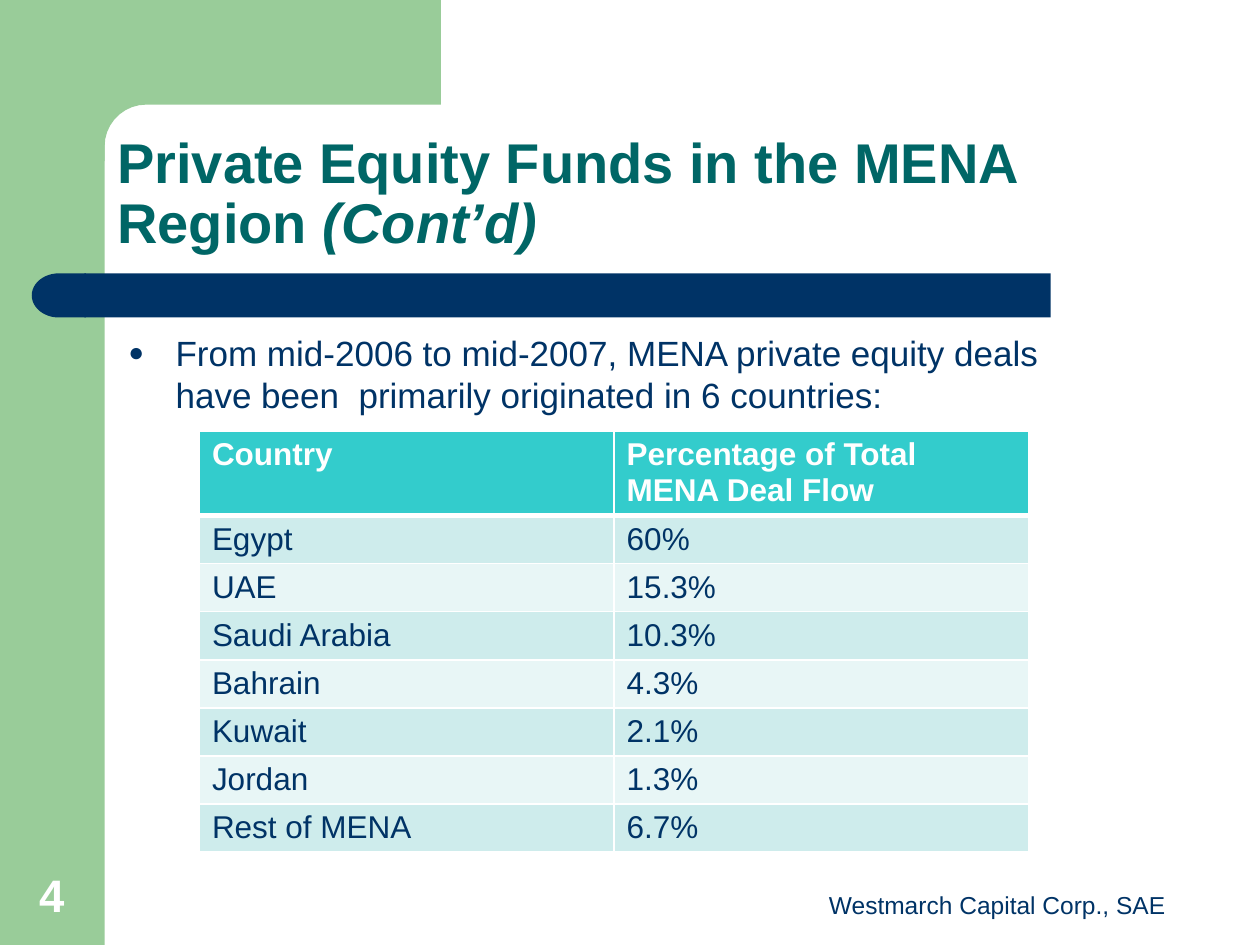
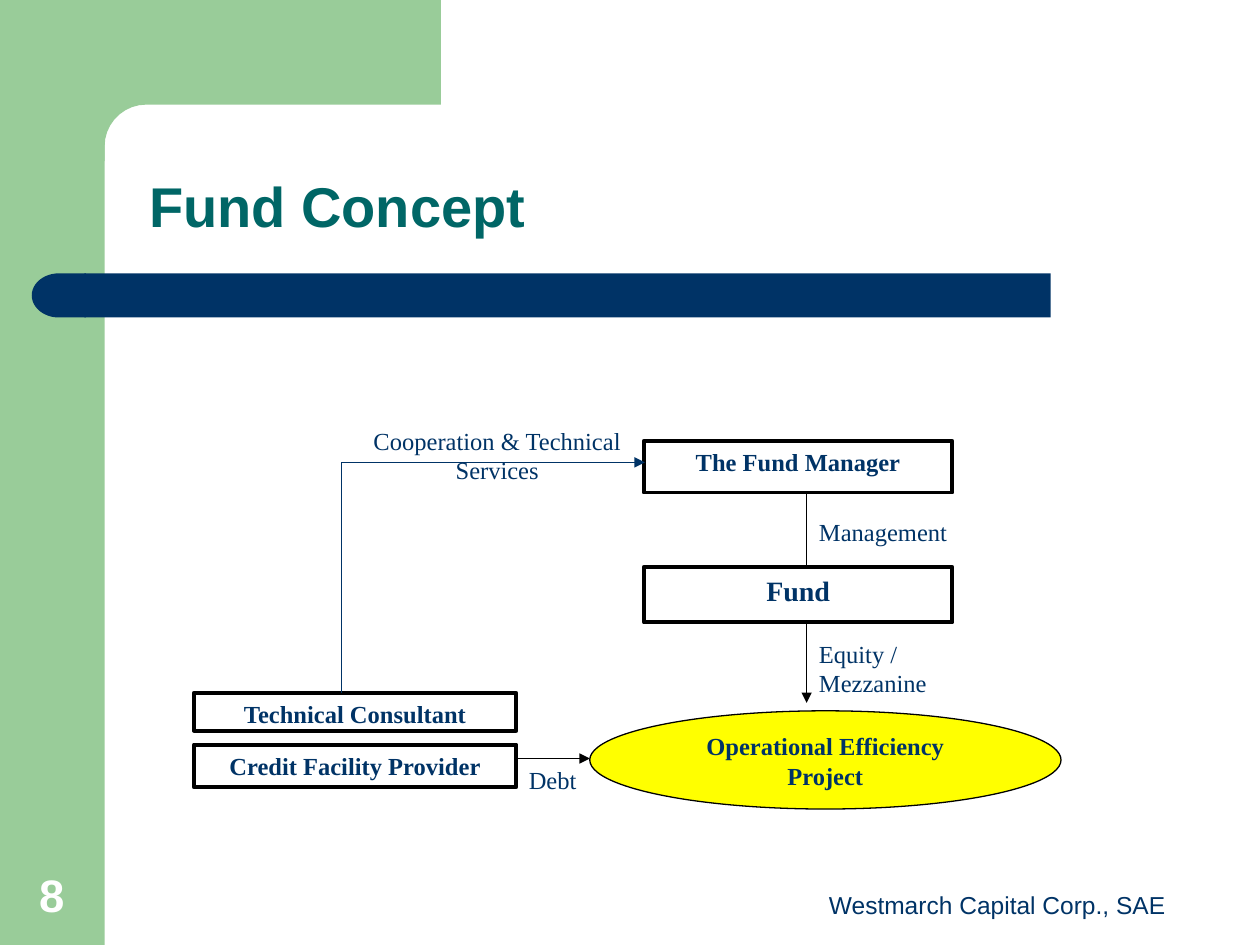
import math
from lxml import etree
from pptx import Presentation, util as u
from pptx.dml.color import RGBColor
from pptx.enum import shapes, text
from pptx.oxml import ns

COLORS = {
    "green": "99CC99", "navy": "003366", "teal": "006666", "turquoise": "33CCCC",
    "mint": "CEECEC", "pale": "E8F6F6", "yellow": "FFFF00", "white": "FFFFFF", "black": "000000",
}
STYLES = {
    "title": ({"name": "Arial", "size": u.Pt(32), "bold": True}, "teal"),
    "body": ({"name": "Arial", "size": u.Pt(20)}, "navy"),
    "header": ({"name": "Arial", "size": u.Pt(18), "bold": True}, "white"),
    "cell": ({"name": "Arial", "size": u.Pt(18), "bold": False}, "navy"),
    "footer": ({"name": "Arial", "size": u.Pt(14)}, "navy"),
    "number": ({"name": "Arial", "size": u.Pt(26), "bold": True}, "white"),
    "label": ({"name": "Times New Roman", "size": u.Pt(14)}, "navy"),
    "node": ({"name": "Times New Roman", "size": u.Pt(14), "bold": True}, "navy"),
    "fund": ({"name": "Times New Roman", "size": u.Pt(16), "bold": True}, "navy"),
}
LEFT, CENTER = text.PP_ALIGN.LEFT, text.PP_ALIGN.CENTER
TOP, BOTTOM = text.MSO_ANCHOR.TOP, text.MSO_ANCHOR.BOTTOM
RECTANGLE, OVAL = shapes.MSO_SHAPE.RECTANGLE, shapes.MSO_SHAPE.OVAL

FOOTER = "Westmarch Capital Corp., SAE"
FOOTER_AREA = (16.08, 17.35, 8.05, 1.32)
NUMBER_AREA = (0.23, 17.35, 1.63, 1.35)

FUNDS_TITLE = [("Private Equity Funds in the MENA Region ", False), ("(Cont’d)", True)]
FUNDS_POINT = "From mid-2006 to mid-2007, MENA private equity deals have been  primarily originated in 6 countries:"
DEAL_FLOW = [
    ("Country", "Percentage of Total MENA Deal Flow"),
    ("Egypt", "60%"),
    ("UAE", "15.3%"),
    ("Saudi Arabia", "10.3%"),
    ("Bahrain", "4.3%"),
    ("Kuwait", "2.1%"),
    ("Jordan", "1.3%"),
    ("Rest of MENA", "6.7%"),
]
HEADER_HEIGHT, ROW_HEIGHT, COLUMN_WIDTH = 1.7, 0.97, 8.36

CONCEPT_TITLE = [("Fund Concept", False)]
FUND_X, FUND_WIDTH = 12.98, 6.22
PARTNER_X, PARTNER_WIDTH = 3.91, 6.5
FLOW_X, DEBT_Y = 16.26, 15.29
ROUTE_X, ROUTE_Y = 6.88, 9.32
NODES = [
    ("The Fund Manager", RECTANGLE, (FUND_X, 8.89, FUND_WIDTH, 1.04), "white", 2.25, "node"),
    ("Fund", RECTANGLE, (FUND_X, 11.43, FUND_WIDTH, 1.12), "white", 2.25, "fund"),
    ("Operational Efficiency Project", OVAL, (11.89, 14.33, 9.5, 1.98), "yellow", 0.75, "node"),
    ("Technical Consultant", RECTANGLE, (PARTNER_X, 13.97, PARTNER_WIDTH, 0.76), "white", 2.25, "node"),
    ("Credit Facility Provider", RECTANGLE, (PARTNER_X, 15.01, PARTNER_WIDTH, 0.86), "white", 2.25, "node"),
]
LABELS = [
    ("Management", (FLOW_X, 10.29, 4.01, 0.84), LEFT),
    ("Equity / Mezzanine", (FLOW_X, 12.75, 3.66, 1.42), LEFT),
    ("Debt", (10.41, DEBT_Y, 1.83, 0.84), LEFT),
    ("Cooperation & Technical Services", (7.09, 8.46, 5.87, 1.78), CENTER),
]
FLOWS = [
    ((FLOW_X, 9.96, FLOW_X, 11.63), "black", True),
    ((FLOW_X, 12.52, FLOW_X, 14.17), "black", True),
    ((9.68, DEBT_Y, 11.89, DEBT_Y), "black", True),
]
COOPERATION = [
    ((ROUTE_X, ROUTE_Y, ROUTE_X, 13.97), "navy", False),
    ((ROUTE_X, ROUTE_Y, 13, ROUTE_Y), "navy", True),
]


def lengths(values):
    return [u.Cm(value) for value in values]


def color(name):
    return RGBColor.from_string(COLORS[name])


def add_element(parent, tag, **attributes):
    return etree.SubElement(parent, ns.qn(tag), attributes)


def paint(shape, fill, line=None, width=0):
    shape.shadow.inherit = False
    shape.fill.solid()
    shape.fill.fore_color.rgb = color(fill)
    if line:
        shape.line.color.rgb = color(line)
        shape.line.width = u.Pt(width)
    else:
        shape.line.fill.background()


def write(frame, runs, style, align=LEFT):
    attributes, ink = STYLES[style]
    paragraph = frame.paragraphs[0]
    paragraph.alignment = align
    for words, italic in runs:
        run = paragraph.add_run()
        run.text = words
        for key, value in attributes.items():
            setattr(run.font, key, value)
        run.font.italic = italic
        run.font.color.rgb = color(ink)
    return paragraph


def set_frame(frame, anchor):
    settings = {"word_wrap": True, "auto_size": text.MSO_AUTO_SIZE.NONE, "vertical_anchor": anchor}
    for key, value in settings.items():
        setattr(frame, key, value)


def add_text(slide, words, area, style, align=LEFT, anchor=TOP):
    frame = slide.shapes.add_textbox(*lengths(area)).text_frame
    set_frame(frame, anchor)
    return write(frame, [(words, False)], style, align)


def add_shape(slide, preset, area, fill, line=None, width=0):
    shape = slide.shapes.add_shape(preset, *lengths(area))
    paint(shape, fill, line, width)
    return shape


def add_corner(slide):
    center, radius = 2.95, 0.84
    angles = [math.radians(degrees) for degrees in range(90, 181, 10)]
    arc = [(center + radius * math.cos(a), center - radius * math.sin(a)) for a in angles]
    points = [(8.89, 0), (8.89, 2.11), *arc, (2.11, 3.25), (1.27, 3.25), (1.27, 0)]
    outline = [lengths(point) for point in points]
    builder = slide.shapes.build_freeform(*outline[0])
    builder.add_line_segments(outline[1:], close=True)
    paint(builder.convert_to_shape(), "green")


def add_slide(presentation, title_runs, title_area, number):
    slide = presentation.slides.add_slide(presentation.slide_layouts[5])
    add_shape(slide, RECTANGLE, (0, 0, 2.11, 19.05), "green")
    add_corner(slide)
    add_shape(slide, RECTANGLE, (1.7, 5.51, 19.48, 0.89), "navy")
    cap = add_shape(slide, shapes.MSO_SHAPE.FLOWCHART_DELAY, (0.64, 5.51, 1.09, 0.89), "navy")
    cap.rotation = 180
    title = slide.shapes.title
    for key, value in zip(("left", "top", "width", "height"), lengths(title_area)):
        setattr(title, key, value)
    set_frame(title.text_frame, BOTTOM)
    write(title.text_frame, title_runs, "title").line_spacing = 0.9
    add_text(slide, FOOTER, FOOTER_AREA, "footer", CENTER, BOTTOM)
    add_text(slide, str(number), NUMBER_AREA, "number", CENTER, BOTTOM)
    return slide


def add_bullet(paragraph):
    paragraph.space_before = u.Pt(4)
    properties = paragraph._p.get_or_add_pPr()
    properties.set("marL", str(u.Cm(0.95)))
    properties.set("indent", str(-u.Cm(0.95)))
    add_element(add_element(properties, "a:buClr"), "a:srgbClr", val=COLORS["navy"])
    add_element(properties, "a:buSzPct", val="75000")
    add_element(properties, "a:buFont", typeface="Arial")
    add_element(properties, "a:buChar", char="●")


def add_borders(cell, widths):
    properties = cell._tc.get_or_add_tcPr()
    for side, width in widths.items():
        border = add_element(properties, f"a:ln{side}", w=str(u.Pt(width)))
        add_element(add_element(border, "a:solidFill"), "a:srgbClr", val=COLORS["white"])


def add_deal_table(slide):
    heights = [HEADER_HEIGHT] + [ROW_HEIGHT] * (len(DEAL_FLOW) - 1)
    area = (4.02, 8.69, 2 * COLUMN_WIDTH, sum(heights))
    table = slide.shapes.add_table(len(DEAL_FLOW), 2, *lengths(area)).table
    for column in table.columns:
        column.width = u.Cm(COLUMN_WIDTH)
    for index, values in enumerate(DEAL_FLOW):
        table.rows[index].height = u.Cm(heights[index])
        fill = "turquoise" if index == 0 else ("pale", "mint")[index % 2]
        borders = {"L": 1, "R": 1, "T": 3 if index == 1 else 1, "B": 3 if index == 0 else 1}
        for cell, value in zip(table.rows[index].cells, values):
            add_borders(cell, borders)
            cell.fill.solid()
            cell.fill.fore_color.rgb = color(fill)
            write(cell.text_frame, [(value, False)], "cell" if index else "header")


def add_lines(slide, lines):
    for ends, ink, arrow in lines:
        connector = slide.shapes.add_connector(shapes.MSO_CONNECTOR.STRAIGHT, *lengths(ends))
        connector.line.color.rgb = color(ink)
        connector.line.width = u.Pt(0.75)
        properties = connector._element.spPr
        if arrow:
            add_element(properties.find(ns.qn("a:ln")), "a:tailEnd", type="triangle")
        add_element(properties, "a:effectLst")


def build_funds(presentation):
    slide = add_slide(presentation, FUNDS_TITLE, (2.11, 2.11, 22.02, 3.18), 4)
    add_bullet(add_text(slide, FUNDS_POINT, (2.34, 6.55, 20.12, 2.11), "body"))
    add_deal_table(slide)


def build_concept(presentation):
    slide = add_slide(presentation, CONCEPT_TITLE, (2.75, 2.75, 22.07, 2.2), 8)
    add_lines(slide, FLOWS)
    for words, preset, area, fill, width, style in NODES:
        node = add_shape(slide, preset, area, fill, "black", width)
        set_frame(node.text_frame, TOP)
        write(node.text_frame, [(words, False)], style, CENTER)
    for words, area, align in LABELS:
        add_text(slide, words, area, "label", align)
    add_lines(slide, COOPERATION)


def main():
    presentation = Presentation()
    presentation.slide_width, presentation.slide_height = lengths((25.4, 19.05))
    build_funds(presentation)
    build_concept(presentation)
    presentation.save("out.pptx")


if __name__ == "__main__":
    main()
